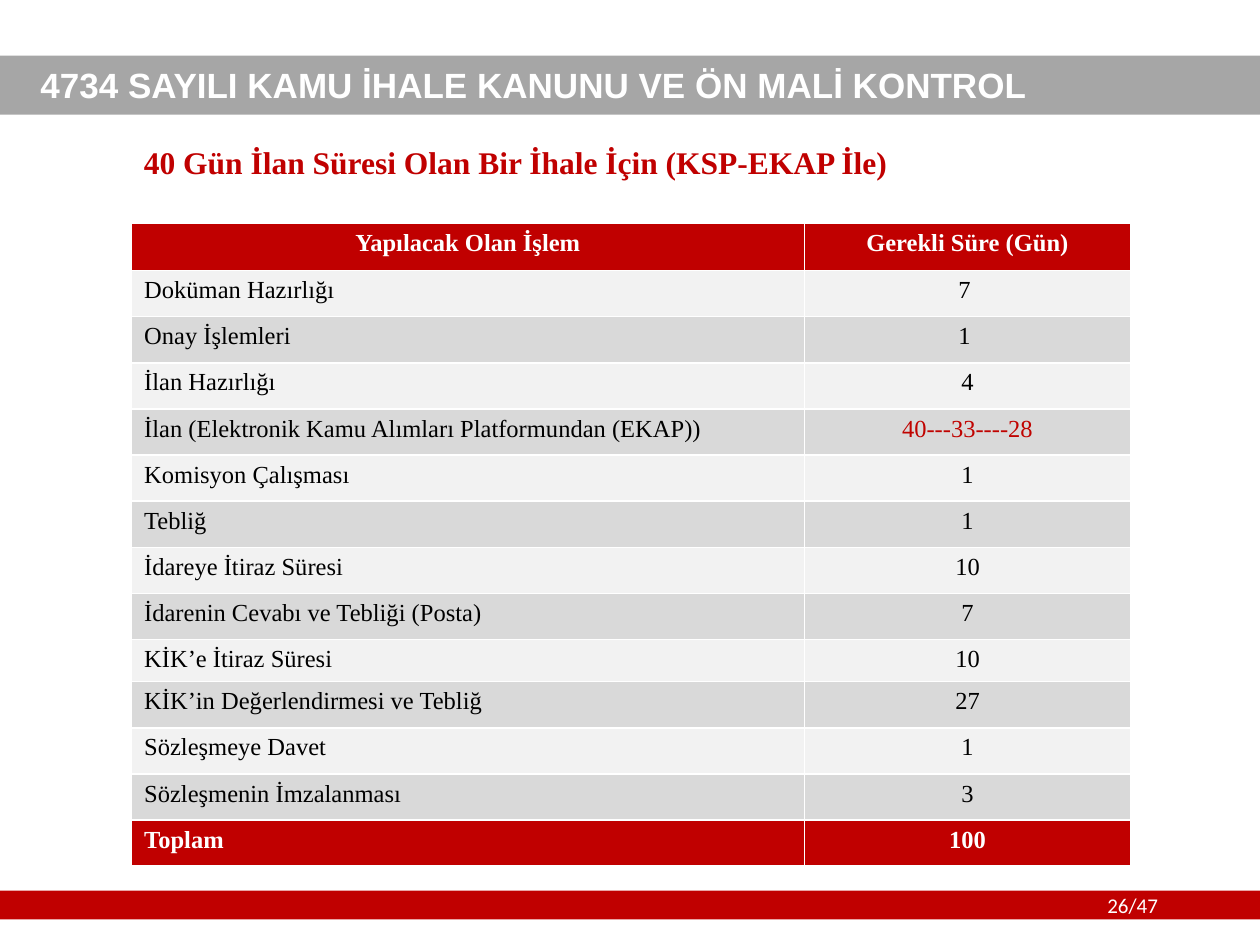
"""Build the tender timeline slide with its table of required days."""
from lxml import etree
from pptx import Presentation
from pptx.dml.color import RGBColor
from pptx.enum import shapes, text
from pptx.oxml import ns
from pptx.util import Pt

COLORS = {
    "red": "C00000", "days": "C00300", "bar": "A6A6A6", "light": "F2F2F2",
    "dark": "D9D9D9", "white": "FFFFFF", "black": "000000",
}
SERIF = "Times New Roman"
HEADING = "4734 SAYILI KAMU İHALE KANUNU VE ÖN MALİ KONTROL"
TITLE = "40 Gün İlan Süresi Olan Bir İhale İçin (KSP-EKAP İle)"
PAGE = "26/47"
ROWS = [
    ("Yapılacak Olan İşlem", "Gerekli Süre (Gün)"),
    ("Doküman Hazırlığı", "7 "),
    ("Onay İşlemleri", "1 "),
    ("İlan Hazırlığı", "4"),
    ("İlan (Elektronik Kamu Alımları Platformundan (EKAP))", "40---33----28"),
    ("Komisyon Çalışması", "1"),
    ("Tebliğ", "1"),
    ("İdareye İtiraz Süresi", "10"),
    ("İdarenin Cevabı ve Tebliği (Posta)", "7"),
    ("KİK’e İtiraz Süresi", "10"),
    ("KİK’in Değerlendirmesi ve Tebliğ", "27"),
    ("Sözleşmeye Davet", "1"),
    ("Sözleşmenin İmzalanması", "3"),
    ("Toplam", "100"),
]
COL_WIDTHS = (384.4, 186.6)
ROW_HEIGHT = 26.37
SPECIAL_HEIGHTS = {0: 27.2, 9: 23.3}
NOTICE_ROW = 4


def rgb(name):
    return RGBColor.from_string(COLORS[name])


def write(tf, content, size, font, color, bold=False, align=text.PP_ALIGN.LEFT):
    tf.text = content
    p = tf.paragraphs[0]
    p.alignment = align
    f = p.runs[0].font
    f.size, f.name, f.bold = Pt(size), font, bold
    f.color.rgb = rgb(color)
    return p


def add_bar(s, top, height, color):
    sp = s.shapes.add_shape(shapes.MSO_SHAPE.RECTANGLE, 0, Pt(top), Pt(720), Pt(height))
    sp.shadow.inherit = False
    sp.fill.solid()
    sp.fill.fore_color.rgb = rgb(color)
    sp.line.fill.background()


def write_heading(sp, content, size, font, color):
    tf = sp.text_frame
    tf.word_wrap = True
    tf.auto_size = text.MSO_AUTO_SIZE.NONE
    tf.vertical_anchor = text.MSO_ANCHOR.MIDDLE
    write(tf, content, size, font, color, True).line_spacing = 0.9


def style_cell(cell, fill):
    cell.fill.solid()
    cell.fill.fore_color.rgb = rgb(fill)
    tc_pr = cell._tc.get_or_add_tcPr()
    for i, side in enumerate(("lnL", "lnR", "lnT", "lnB")):
        ln = etree.Element(ns.qn(f"a:{side}"), w=str(Pt(1)))
        solid = etree.SubElement(ln, ns.qn("a:solidFill"))
        etree.SubElement(solid, ns.qn("a:srgbClr"), val=COLORS["white"])
        tc_pr.insert(i, ln)


def add_schedule(s):
    heights = [SPECIAL_HEIGHTS.get(i, ROW_HEIGHT) for i in range(len(ROWS))]
    table = s.shapes.add_table(
        len(ROWS), len(COL_WIDTHS), Pt(75.2), Pt(127.4),
        Pt(sum(COL_WIDTHS)), Pt(sum(heights))).table
    for col, width in zip(table.columns, COL_WIDTHS):
        col.width = Pt(width)
    for i, (row, height) in enumerate(zip(ROWS, heights)):
        table.rows[i].height = Pt(height)
        strong = i in (0, len(ROWS) - 1)
        fill = "red" if strong else ("dark", "light")[i % 2]
        for j, content in enumerate(row):
            color = "white" if strong else "black"
            if (i, j) == (NOTICE_ROW, 1):
                color = "days"
            centered = i == 0 or j == 1
            align = text.PP_ALIGN.CENTER if centered else text.PP_ALIGN.LEFT
            cell = table.cell(i, j)
            write(cell.text_frame, content, 14, SERIF, color, strong, align)
            style_cell(cell, fill)


def main():
    prs = Presentation()
    prs.slide_width, prs.slide_height = Pt(720), Pt(540)
    s = prs.slides.add_slide(prs.slide_layouts[5])
    add_bar(s, 509, 16.4, "red")
    add_bar(s, 31.8, 33.7, "bar")

    heading = s.shapes.add_textbox(Pt(16), Pt(33), Pt(651.6), Pt(33.8))
    write_heading(heading, HEADING, 20, "Arial", "white")
    title = s.shapes.title
    title.left, title.top, title.width, title.height = Pt(75), Pt(77), Pt(651.6), Pt(33.8)
    write_heading(title, TITLE, 18, SERIF, "red")

    page = s.shapes.add_textbox(Pt(625.7), Pt(506.2), Pt(67), Pt(21.8))
    page.text_frame.word_wrap = True
    write(page.text_frame, PAGE, 12, "Calibri", "white")
    add_schedule(s)
    prs.save("out.pptx")


if __name__ == "__main__":
    main()
